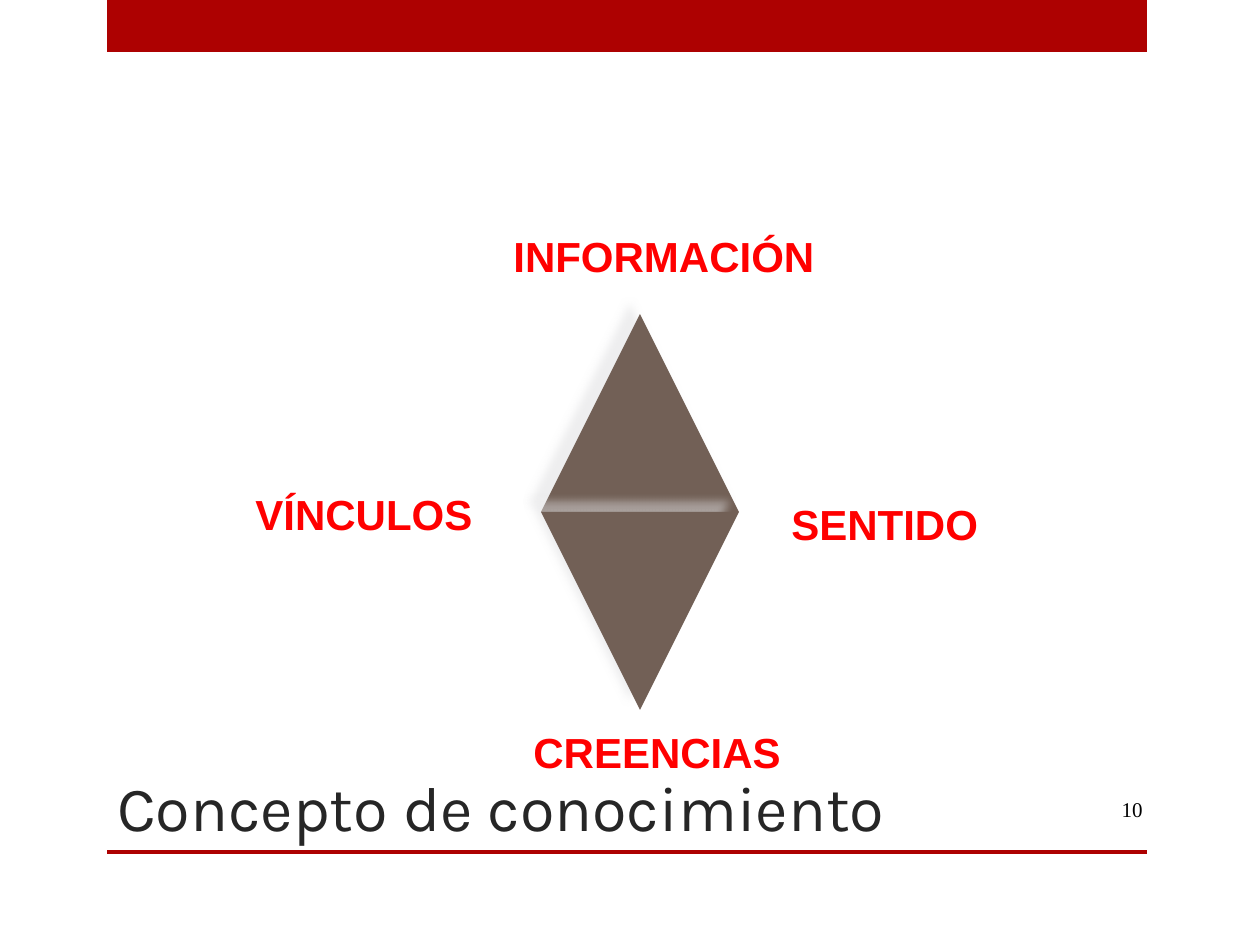
from lxml import etree
from pptx import Presentation
from pptx.dml.color import RGBColor
from pptx.enum.shapes import MSO_SHAPE
from pptx.enum.text import MSO_ANCHOR, MSO_AUTO_SIZE, PP_ALIGN
from pptx.oxml.ns import qn
from pptx.util import Emu, Inches, Pt

PX = Inches(1) / 126
COLORS = {"band": "AD0101", "diamond": "726056", "shadow": "DEDEE0",
          "label": "FF0000", "title": "262626", "number": "000000"}

TITLE = ("Concepto de conocimiento", (105, 630, 935, 220))
PAGE_NUMBER = ("10", (1050, 784, 105, 50))
# text, box, wrap
LABELS = [
    ("CREENCIAS", (521, 720, 275, 63), False),
    ("SENTIDO", (779, 492, 228, 63), True),
    ("INFORMACIÓN", (501, 224, 327, 63), False),
    ("VÍNCULOS", (243, 482, 243, 63), False),
]
BANDS = [(107, 0, 1040, 52), (107, 850, 1040, 4)]
DIAMOND_LEFT, DIAMOND_TOP, HALF_SIZE = 541, 314, 198


def emu(box):
    return [Emu(round(value * PX)) for value in box]


def add_filled(slide, kind, box, color):
    shape = slide.shapes.add_shape(kind, *emu(box))
    shape.shadow.inherit = False
    shape.fill.solid()
    shape.fill.fore_color.rgb = RGBColor.from_string(COLORS[color])
    shape.line.fill.background()
    return shape


def cast_shadow(shape):
    """Soft shadow towards the upper left."""
    effects = shape._element.spPr.find(qn("a:effectLst"))
    shadow = etree.SubElement(effects, qn("a:outerShdw"), blurRad=str(Pt(5)),
                              dist=str(Pt(8.5)), dir=str(225 * 60000),
                              algn="ctr", rotWithShape="0")
    color = etree.SubElement(shadow, qn("a:srgbClr"), val=COLORS["shadow"])
    etree.SubElement(color, qn("a:alpha"), val="50000")


def add_text(slide, text, box, font, size, color, bold=False, wrap=True,
             anchor=MSO_ANCHOR.TOP, align=PP_ALIGN.LEFT):
    frame = slide.shapes.add_textbox(*emu(box)).text_frame
    frame.word_wrap = wrap
    frame.vertical_anchor = anchor
    paragraph = frame.paragraphs[0]
    paragraph.alignment = align
    run = paragraph.add_run()
    run.text = text
    run.font.name = font
    run.font.size = Pt(size)
    run.font.bold = bold
    run.font.color.rgb = RGBColor.from_string(COLORS[color])
    return frame


def main():
    deck = Presentation()
    deck.slide_width, deck.slide_height = Inches(10), Inches(7.5)
    slide = deck.slides.add_slide(deck.slide_layouts[6])

    for box in BANDS:
        add_filled(slide, MSO_SHAPE.RECTANGLE, box, "band")
    add_text(slide, *TITLE, "Karla", 36, "title", anchor=MSO_ANCHOR.BOTTOM)
    add_text(slide, *PAGE_NUMBER, "Times New Roman", 12, "number",
             anchor=MSO_ANCHOR.MIDDLE, align=PP_ALIGN.RIGHT)

    for half in range(2):
        box = (DIAMOND_LEFT, DIAMOND_TOP + half * HALF_SIZE, HALF_SIZE, HALF_SIZE)
        triangle = add_filled(slide, MSO_SHAPE.ISOSCELES_TRIANGLE, box, "diamond")
        cast_shadow(triangle)
        if half:
            triangle._element.spPr.xfrm.set("flipV", "1")

    for text, box, wrap in LABELS:
        frame = add_text(slide, text, box, "Arial", 24, "label", bold=True, wrap=wrap)
        frame.auto_size = MSO_AUTO_SIZE.SHAPE_TO_FIT_TEXT

    deck.save("out.pptx")


if __name__ == "__main__":
    main()
